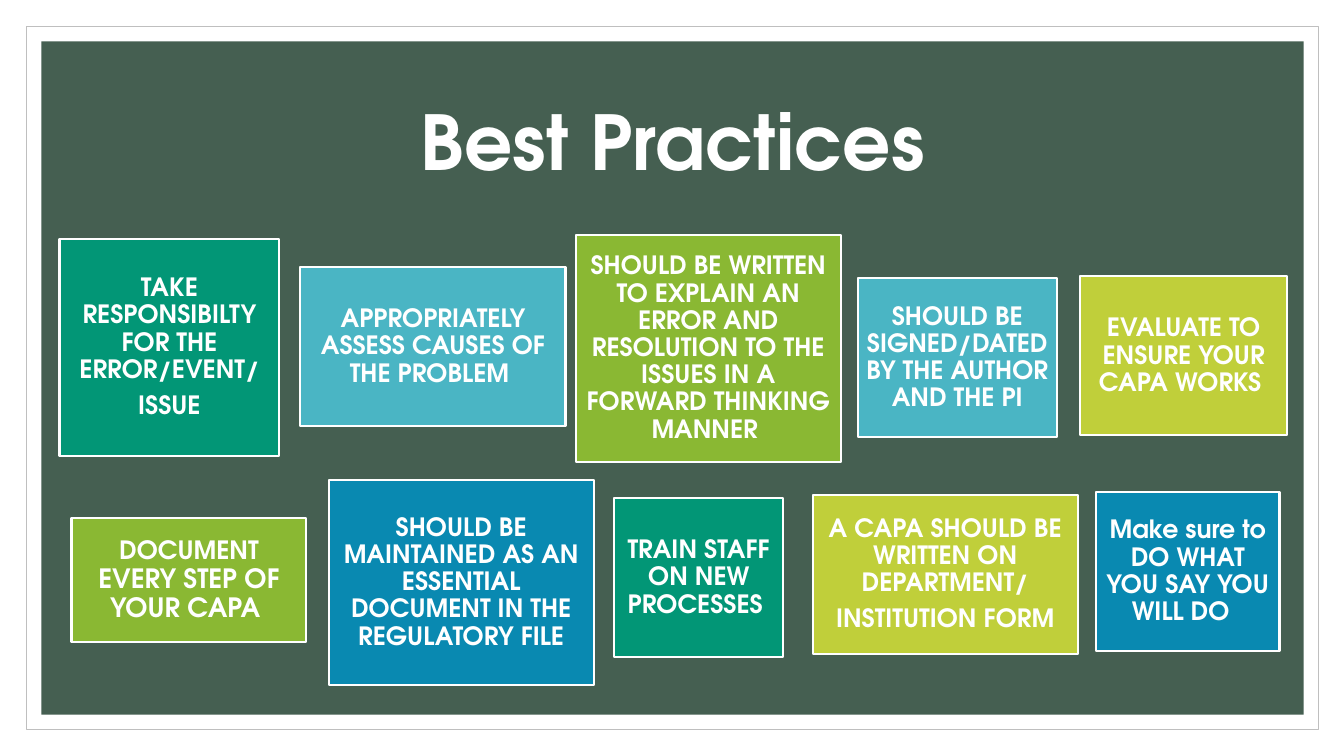
from collections import namedtuple
from dataclasses import dataclass

from pptx import Presentation
from pptx.dml.color import RGBColor
from pptx.enum.shapes import MSO_SHAPE
from pptx.enum.text import MSO_ANCHOR, PP_ALIGN
from pptx.util import Pt

PX = 9144
Box = namedtuple("Box", "x y w h")
Tile = namedtuple("Tile", "x y w h fill paragraphs")


@dataclass(frozen=True)
class Theme:
    """Colours, font and type sizes of the slide."""
    font: str = "TeX Gyre Adventor"
    white: str = "FFFFFF"
    frame: str = "BFBFBF"
    board: str = "455F51"
    teal: str = "029676"
    aqua: str = "4AB5C4"
    green: str = "8AB833"
    lime: str = "C0CF3A"
    blue: str = "0989B1"
    title: int = 54
    body: int = 18
    body_large: int = 19


T = Theme()

TOP_ROW = [
    Tile(0, 4, 218, 215, T.teal,
         ["TAKE RESPONSIBILTY FOR THE ERROR/EVENT/", "ISSUE"]),
    Tile(239, 32, 263, 158, T.aqua,
         ["APPROPRIATELY ASSESS CAUSES OF THE PROBLEM "]),
    Tile(512, 0, 263, 225, T.green,
         ["SHOULD BE WRITTEN TO EXPLAIN AN ERROR AND RESOLUTION "
          "TO THE ISSUES IN A FORWARD THINKING MANNER "]),
    Tile(792, 43, 197, 158, T.aqua,
         ["SHOULD BE SIGNED/DATED BY THE AUTHOR AND THE PI"]),
    Tile(1012, 41, 206, 158, T.lime,
         ["EVALUATE TO ENSURE YOUR CAPA WORKS "]),
]

BOTTOM_ROW = [
    Tile(0, 38, 233, 123, T.green,
         [[("DOCUMENT", T.body), (" EVERY STEP OF YOUR CAPA ", T.body_large)]]),
    Tile(255, 0, 263, 204, T.blue,
         ["SHOULD BE MAINTAINED AS AN ESSENTIAL DOCUMENT IN THE REGULATORY FILE"]),
    Tile(538, 18, 168, 158, T.teal,
         ["TRAIN STAFF ON NEW PROCESSES "]),
    Tile(735, 15, 263, 158, T.lime,
         ["A CAPA SHOULD BE WRITTEN ON DEPARTMENT/", "INSTITUTION FORM"]),
    Tile(1016, 12, 182, 158, T.blue,
         ["Make sure to DO WHAT YOU SAY YOU WILL DO  "]),
]


def emu(box):
    """Turn a box in px into EMU lengths."""
    return [v * PX for v in box]


def add_rect(s, box, fill, line=None, width=1.5):
    """Draw a flat rectangle, outlined when a line colour is given."""
    sp = s.shapes.add_shape(MSO_SHAPE.RECTANGLE, *emu(box))
    sp.shadow.inherit = False
    sp.fill.solid()
    sp.fill.fore_color.rgb = RGBColor.from_string(fill)
    if line:
        sp.line.color.rgb = RGBColor.from_string(line)
        sp.line.width = Pt(width)
    else:
        sp.line.fill.background()
    return sp


def set_text(sp, paragraphs, size=T.body, after=0, inset=7):
    """Fill a shape with bold centred paragraphs of text or (text, size) runs."""
    tf = sp.text_frame
    tf.word_wrap = True
    tf.vertical_anchor = MSO_ANCHOR.MIDDLE
    tf.margin_left = tf.margin_right = tf.margin_top = tf.margin_bottom = inset * PX
    for i, runs in enumerate(paragraphs):
        p = tf.add_paragraph() if i else tf.paragraphs[0]
        p.alignment = PP_ALIGN.CENTER
        p.line_spacing = 0.9
        p.space_after = Pt(after)
        for text, points in [(runs, size)] if isinstance(runs, str) else runs:
            r = p.add_run()
            r.text = text
            r.font.name = T.font
            r.font.size = Pt(points)
            r.font.bold = True
            r.font.color.rgb = RGBColor.from_string(T.white)


def add_board(s, box, gap=15):
    """Draw the thin frame and the dark board inside it."""
    add_rect(s, box, T.white, T.frame, 0.5)
    inner = Box(box.x + gap, box.y + gap, box.w - 2 * gap, box.h - 2 * gap)
    add_rect(s, inner, T.board)


def add_title(s, box, text):
    """Place the slide title."""
    set_text(s.shapes.add_textbox(*emu(box)), [text], size=T.title)


def add_tiles(s, box, tiles):
    """Place a row of tiles relative to the corner of its box."""
    for t in tiles:
        sp = add_rect(s, Box(box.x + t.x, box.y + t.y, t.w, t.h), t.fill, T.white)
        set_text(sp, t.paragraphs, after=6.3)


def main():
    """Build the slide and save it."""
    prs = Presentation()
    prs.slide_width, prs.slide_height = 1333 * PX, 750 * PX
    s = prs.slides.add_slide(prs.slide_layouts[6])
    add_board(s, Box(26, 26, 1282, 698))
    add_title(s, Box(117, 70, 1100, 150), "Best Practices")
    add_tiles(s, Box(59, 233, 1218, 225), TOP_ROW)
    add_tiles(s, Box(71, 476, 1198, 204), BOTTOM_ROW)
    prs.save("out.pptx")


if __name__ == "__main__":
    main()
